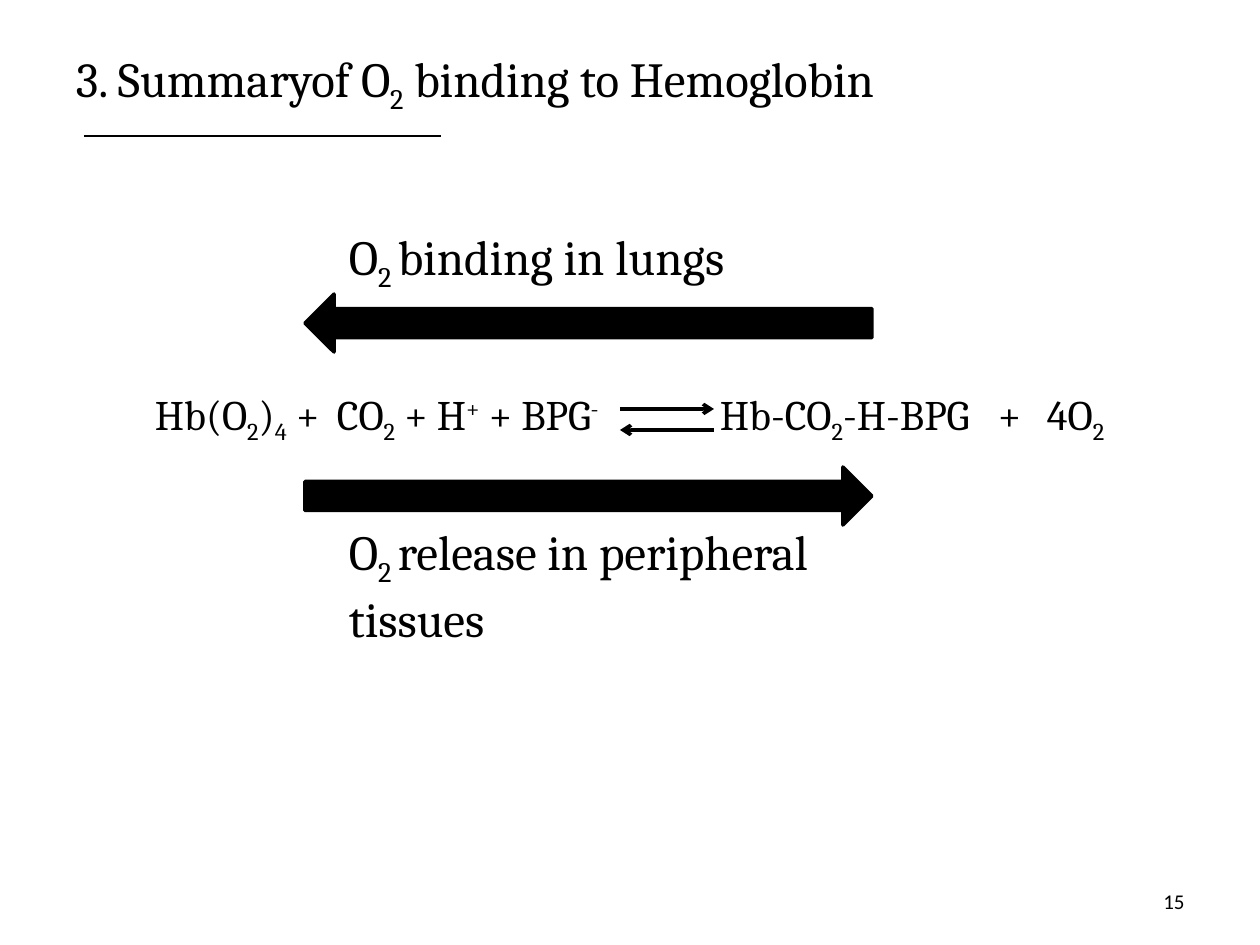
from dataclasses import dataclass

from lxml.etree import SubElement
from pptx import Presentation
from pptx.dml.color import RGBColor
from pptx.enum.shapes import MSO_CONNECTOR, MSO_SHAPE
from pptx.enum.text import MSO_ANCHOR, PP_ALIGN
from pptx.oxml.ns import qn
from pptx.util import Pt

EMU_PER_PX = 914400 / 126
SUBSCRIPT, SUPERSCRIPT = -25000, 30000


@dataclass(frozen=True)
class Theme:
    """Colours, fonts, type sizes and line widths of the slide."""

    ink: RGBColor = RGBColor(0, 0, 0)
    paper: RGBColor = RGBColor(255, 255, 255)
    serif: str = "Cambria"
    sans: str = "Calibri"
    heading: int = 28
    equation: int = 24
    number: int = 12
    rule: float = 1.5
    arrow: float = 2


THEME = Theme()


def px(length):
    """Convert whole pixels to EMU."""
    return round(length * EMU_PER_PX)


def sub(text):
    """Return a subscript run."""
    return text, SUBSCRIPT


def sup(text):
    """Return a superscript run."""
    return text, SUPERSCRIPT


def add_text(slide, box, runs, size, font=THEME.serif, align=PP_ALIGN.LEFT,
             anchor=MSO_ANCHOR.TOP, indent=13):
    """Add a wrapped text box run by run and return its paragraph."""
    shape = slide.shapes.add_textbox(*map(px, box))
    frame = shape.text_frame
    frame.word_wrap = True
    frame.vertical_anchor = anchor
    frame.margin_left = px(indent)
    paragraph = frame.paragraphs[0]
    paragraph.alignment = align
    for item in runs:
        text, baseline = (item, 0) if isinstance(item, str) else item
        run = paragraph.add_run()
        run.text = text
        run.font.name = font
        run.font.size = Pt(size)
        run.font.color.rgb = THEME.ink
        if baseline:
            run._r.get_or_add_rPr().set("baseline", str(baseline))
    return paragraph


def set_tabs(paragraph, stops):
    """Give a paragraph left tab stops measured from its text edge."""
    tabs = SubElement(paragraph._p.get_or_add_pPr(), qn("a:tabLst"))
    for stop in stops:
        SubElement(tabs, qn("a:tab"), pos=str(px(stop)), algn="l")


def add_line(slide, left, right, y, width, arrow_end=None):
    """Add a horizontal line with an optional arrowhead."""
    line = slide.shapes.add_connector(
        MSO_CONNECTOR.STRAIGHT, px(left), px(y), px(right), px(y))
    line.line.color.rgb = THEME.ink
    line.line.width = Pt(width)
    if arrow_end:
        SubElement(line.line._get_or_add_ln(), qn(f"a:{arrow_end}"), type="arrow")
    SubElement(line._element.spPr, qn("a:effectLst"))


def add_block_arrow(slide, top, rotation=0):
    """Add a wide solid reaction arrow."""
    shape = slide.shapes.add_shape(
        MSO_SHAPE.RIGHT_ARROW, px(305), px(top), px(567), px(58))
    shape.rotation = rotation
    shape.shadow.inherit = False
    shape.fill.solid()
    shape.fill.fore_color.rgb = THEME.ink
    shape.line.color.rgb = THEME.ink
    shape.line.width = Pt(THEME.arrow)


def add_equation(slide):
    """Add the hemoglobin equilibrium and its pair of thin arrows."""
    runs = ["Hb(O", sub("2"), ")", sub("4"), " +\tCO", sub("2"), " + H", sup("+"),
            " + BPG", sup("-"), "\tHb-CO", sub("2"), "-H-BPG\t+\t4O", sub("2")]
    paragraph = add_text(slide, (63, 382, 1134, 70), runs, THEME.equation, indent=92)
    set_tabs(paragraph, (182, 565, 843, 892))
    for y, arrow_end in ((409, "tailEnd"), (430, "headEnd")):
        add_line(slide, 620, 714, y, THEME.arrow, arrow_end)


def main():
    """Build and save the slide."""
    presentation = Presentation()
    presentation.slide_width, presentation.slide_height = px(1260), px(945)
    slide = presentation.slides.add_slide(presentation.slide_layouts[6])
    slide.background.fill.solid()
    slide.background.fill.fore_color.rgb = THEME.paper

    add_text(slide, (63, 38, 1134, 88),
             ["3. Summaryof O", sub("2"), " binding to Hemoglobin"],
             THEME.heading, anchor=MSO_ANCHOR.MIDDLE)
    add_line(slide, 84, 441, 136, THEME.rule)
    add_equation(slide)
    add_block_arrow(slide, 467)
    add_block_arrow(slide, 294, rotation=180)
    for top, height, label in ((220, 72, "binding in lungs"),
                               (515, 131, "release in peripheral tissues")):
        add_text(slide, (336, top, 567, height), ["O", sub("2 "), label], THEME.heading)
    add_text(slide, (903, 876, 294, 50), ["15"], THEME.number, THEME.sans,
             PP_ALIGN.RIGHT, MSO_ANCHOR.MIDDLE)
    presentation.save("out.pptx")


if __name__ == "__main__":
    main()
